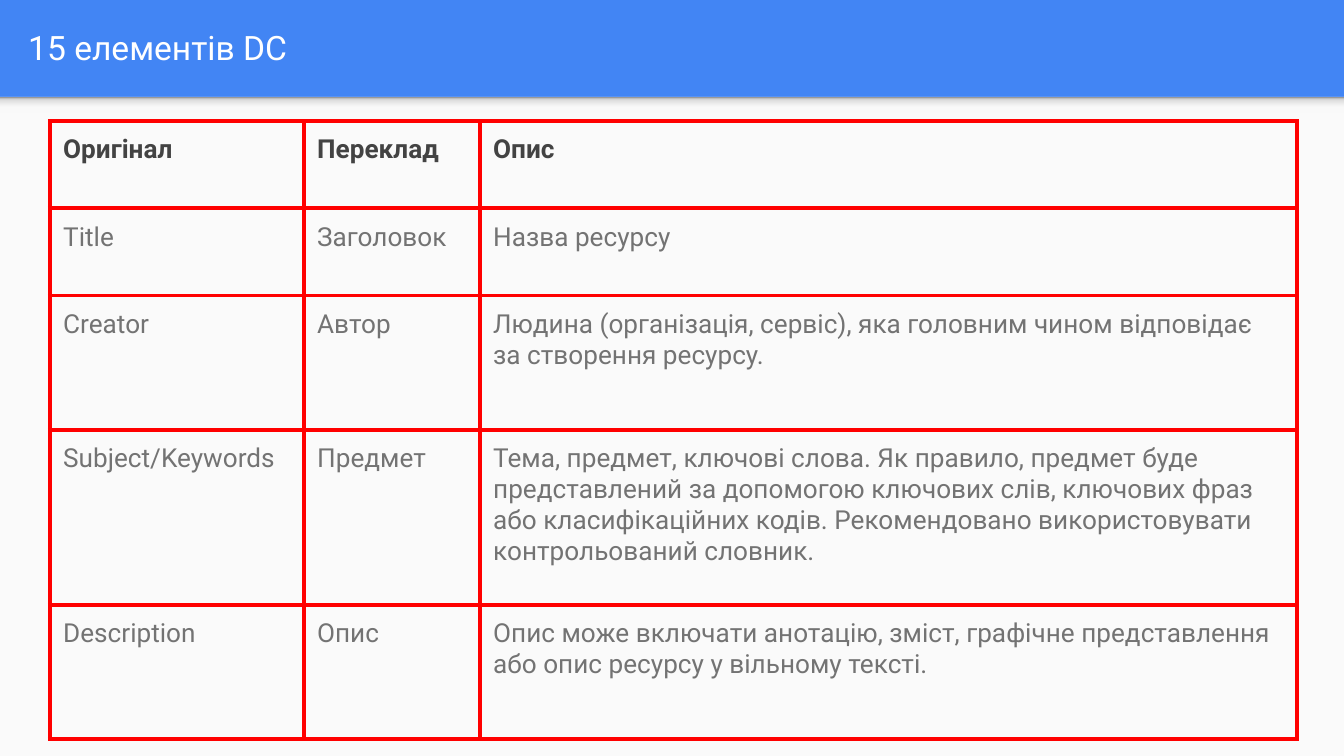
from lxml.etree import SubElement
from pptx import Presentation
from pptx.dml.color import RGBColor
from pptx.enum.shapes import MSO_SHAPE
from pptx.enum.text import MSO_ANCHOR, MSO_AUTO_SIZE, PP_ALIGN
from pptx.oxml import parse_xml
from pptx.oxml.ns import nsdecls, qn
from pptx.util import Inches, Pt

BLUE = RGBColor(0x42, 0x85, 0xF4)
PAPER = RGBColor(0xFA, 0xFA, 0xFA)
WHITE = RGBColor(0xFF, 0xFF, 0xFF)
DARK = RGBColor(0x43, 0x43, 0x43)
GREY = RGBColor(0x73, 0x73, 0x73)
RED = RGBColor(0xFF, 0x00, 0x00)
SHADE_STOPS = [
    (0, RGBColor(0xF9, 0xF9, 0xF9)),
    (36, RGBColor(0xF9, 0xF9, 0xF9)),
    (80, RGBColor(0xDE, 0xDE, 0xDE)),
    (100, RGBColor(0x99, 0x99, 0x99)),
]
COLUMN_WIDTHS = [1.89, 1.31, 6.08]
ROW_HEIGHTS = [0.65, 0.65, 1, 1.3, 1]
ELEMENTS = [
    ("Оригінал", "Переклад", "Опис"),
    ("Title", "Заголовок", "Назва ресурсу"),
    ("Creator", "Автор",
     "Людина (організація, сервіс), яка головним чином відповідає за створення ресурсу."),
    ("Subject/Keywords", "Предмет",
     "Тема, предмет, ключові слова. Як правило, предмет буде представлений за допомогою "
     "ключових слів, ключових фраз або класифікаційних кодів. Рекомендовано "
     "використовувати контрольований словник."),
    ("Description", "Опис",
     "Опис може включати анотацію, зміст, графічне представлення або опис ресурсу "
     "у вільному тексті."),
]


def write(frame, text, size=14, color=GREY, bold=False):
    paragraph = frame.paragraphs[0]
    paragraph.alignment = PP_ALIGN.LEFT
    run = paragraph.add_run()
    run.text = text
    run.font.name = "Roboto"
    run.font.size = Pt(size)
    run.font.color.rgb = color
    run.font.bold = bold


def add_border(cell, side):
    line = SubElement(cell._tc.get_or_add_tcPr(), qn(f"a:{side}"), w=str(Pt(2.25)))
    SubElement(SubElement(line, qn("a:solidFill")), qn("a:srgbClr"), val=str(RED))


prs = Presentation()
prs.slide_width = Inches(10)
prs.slide_height = Inches(10 * 9 / 16)
slide = prs.slides.add_slide(prs.slide_layouts[5])
slide.background.fill.solid()
slide.background.fill.fore_color.rgb = BLUE

page_top = Inches(0.72)
page = slide.shapes.add_shape(
    MSO_SHAPE.RECTANGLE, Inches(0), page_top, prs.slide_width, prs.slide_height - page_top)
page.fill.solid()
page.fill.fore_color.rgb = PAPER

header_shade = slide.shapes.add_shape(
    MSO_SHAPE.RECTANGLE, Inches(0), page_top, prs.slide_width, Inches(0.12))
stops = "".join(
    f'<a:gs pos="{position * 1000}"><a:srgbClr val="{color}"/></a:gs>'
    for position, color in SHADE_STOPS)
gradient = parse_xml(
    f'<a:gradFill {nsdecls("a")}><a:gsLst>{stops}</a:gsLst>'
    '<a:lin ang="16200000" scaled="0"/></a:gradFill>')
header_shade._element.spPr.find(qn("a:prstGeom")).addnext(gradient)

for panel in (page, header_shade):
    panel.line.fill.background()
    panel.shadow.inherit = False

heading = slide.shapes.title
heading.left, heading.top = Inches(0.11), Inches(0.02)
heading.width, heading.height = Inches(9.65), Inches(0.66)
heading_frame = heading.text_frame
heading_frame.auto_size = MSO_AUTO_SIZE.NONE
heading_frame.word_wrap = True
heading_frame.vertical_anchor = MSO_ANCHOR.MIDDLE
heading_frame.margin_left = heading_frame.margin_right = Inches(0.1)
heading_frame.margin_top = heading_frame.margin_bottom = Inches(0.1)
write(heading_frame, "15 елементів DC", size=18, color=WHITE)

elements_table = slide.shapes.add_table(
    len(ROW_HEIGHTS), len(COLUMN_WIDTHS), Inches(0.37), Inches(0.9),
    Inches(sum(COLUMN_WIDTHS)), Inches(sum(ROW_HEIGHTS))).table
elements_table.first_row = False
elements_table.horz_banding = False
for column, width in zip(elements_table.columns, COLUMN_WIDTHS):
    column.width = Inches(width)

for row_index, (row, height) in enumerate(zip(elements_table.rows, ROW_HEIGHTS)):
    row.height = Inches(height)
    is_header = row_index == 0
    for cell, text in zip(row.cells, ELEMENTS[row_index]):
        cell.margin_left = cell.margin_right = Inches(0.1)
        cell.margin_top = cell.margin_bottom = Inches(0.1)
        for side in ("lnL", "lnR", "lnT", "lnB"):
            add_border(cell, side)
        cell.fill.background()
        write(cell.text_frame, text, color=DARK if is_header else GREY, bold=is_header)

prs.save("out.pptx")
